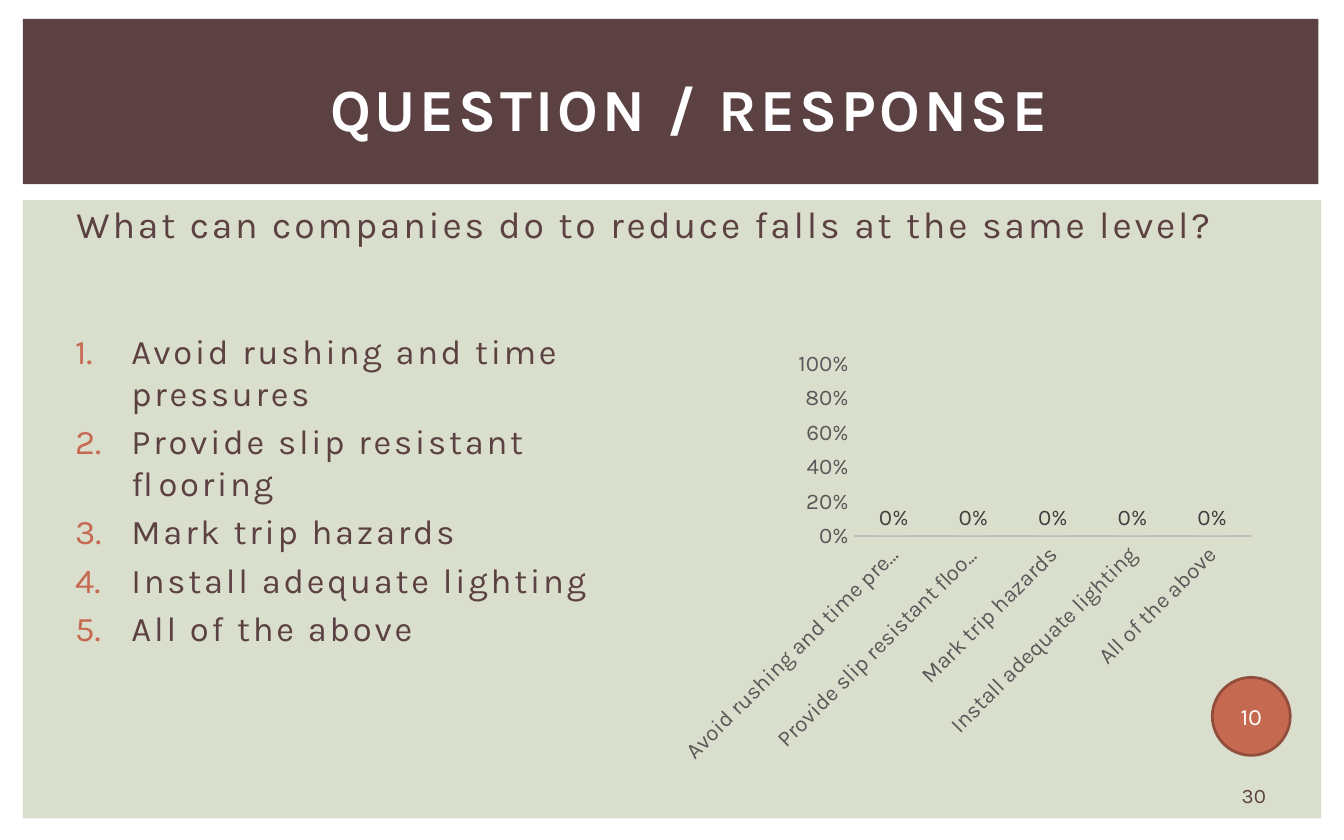
"""Build a quiz slide with numbered answers, a response chart and a countdown."""
from lxml import etree
from pptx import Presentation, util as u
from pptx.chart.data import CategoryChartData
from pptx.dml.color import RGBColor
from pptx.enum import chart as ch, dml, shapes, text
from pptx.oxml import parse_xml
from pptx.oxml.ns import qn

FONT = "Karla"
COLORS = {"brown": "5B4141", "sage": "DADECC", "rust": "C66951", "dark_rust": "924E3C",
          "pale": "F4E1DC", "white": "FFFFFF", "black": "000000", "axis_text": "595959",
          "axis_line": "BFBFBF", "label": "404040"}
ANSWERS = ["Avoid rushing and time pressures", "Provide slip resistant flooring",
           "Mark trip hazards", "Install adequate lighting", "All of the above"]
VOTES = [0] * len(ANSWERS)
PANELS = [((0.17, 1.49, 9.66, 4.6), "sage"), ((0.17, 0.14, 9.64, 1.23), "brown")]
CENTER, LEFT = text.PP_ALIGN.CENTER, text.PP_ALIGN.LEFT
MIDDLE, TOP = text.MSO_ANCHOR.MIDDLE, text.MSO_ANCHOR.TOP
TEXTS = [
    {"box": (0.42, 0.32, 9.17, 0.96), "lines": ["QUESTION / RESPONSE"], "size": 32,
     "color": "white", "bold": True, "spacing": 2, "align": CENTER, "anchor": MIDDLE, "inset": 0.35},
    {"box": (9.01, 5.79, 0.64, 0.25), "lines": ["30"], "size": 11, "color": "brown",
     "align": CENTER, "anchor": MIDDLE},
    {"box": (0.42, 1.45, 9.17, 0.75), "size": 20, "color": "brown", "spacing": 1.5,
     "lines": ["What can companies do to reduce falls at the same level?"],
     "before": 4, "indent": (0.05, 0)},
    {"box": (0.42, 2.41, 4.48, 2.3), "lines": ANSWERS, "size": 18.5, "color": "brown",
     "spacing": 1.5, "before": 3.7, "indent": (0.46, -0.42), "numbers": "rust"},
]
CHART_BOX = (5, 2.04, 4.5, 3.67)
PLOT = {"x": 0.301, "y": 0.181, "w": 0.658, "h": 0.35}
TIMER_BOX = (9.02, 5.04, 0.58, 0.58)


def rgb(name):
    return RGBColor.from_string(COLORS[name])


def inches(box):
    return [u.Inches(v) for v in box]


def style(font, size, color, bold=False):
    for key, value in {"name": FONT, "size": u.Pt(size), "bold": bold}.items():
        setattr(font, key, value)
    font.color.rgb = rgb(color)


def add_shape(s, kind, box, fill, line=None):
    sp = s.shapes.add_shape(kind, *inches(box))
    sp.shadow.inherit = False
    sp.fill.solid()
    sp.fill.fore_color.rgb = rgb(fill)
    if line:
        sp.line.color.rgb = rgb(line)
        sp.line.width = u.Pt(1.5)
    else:
        sp.line.fill.background()
    return sp


def number(pPr, color):
    clr = etree.SubElement(pPr, qn("a:buClr"))
    etree.SubElement(clr, qn("a:srgbClr"), val=COLORS[color])
    etree.SubElement(pPr, qn("a:buFont"), typeface=FONT)
    etree.SubElement(pPr, qn("a:buAutoNum"), type="arabicPeriod")


def write(tf, item):
    tf.vertical_anchor = item.get("anchor", TOP)
    for i, line in enumerate(item["lines"]):
        p = tf.add_paragraph() if i else tf.paragraphs[0]
        p.alignment = item.get("align", LEFT)
        p.space_before = u.Pt(item.get("before", 0))
        margin, indent = inches(item.get("indent", (0, 0)))
        pPr = p._p.get_or_add_pPr()
        pPr.set("marL", str(margin))
        pPr.set("indent", str(indent))
        if "numbers" in item:
            number(pPr, item["numbers"])
        r = p.add_run()
        r.text = line
        style(r.font, item["size"], item["color"], item.get("bold", False))
        r._r.get_or_add_rPr().set("spc", str(int(item.get("spacing", 0) * 100)))


def add_text(s, item):
    tf = s.shapes.add_textbox(*inches(item["box"])).text_frame
    tf.word_wrap = True
    tf.margin_left = u.Inches(item.get("inset", 0.1))
    write(tf, item)


def set_plot_area(chart):
    area = chart._chartSpace.chart.plotArea
    for old in area.findall(qn("c:layout")):
        area.remove(old)
    parts = {"layoutTarget": "inner", "xMode": "edge", "yMode": "edge", **PLOT}
    body = "".join(f'<c:{k} val="{v}"/>' for k, v in parts.items())
    ns = "http://schemas.openxmlformats.org/drawingml/2006/chart"
    area.insert(0, parse_xml(f'<c:layout xmlns:c="{ns}"><c:manualLayout>{body}'
                             '</c:manualLayout></c:layout>'))


def add_votes(s):
    data = CategoryChartData(number_format="0%")
    data.categories = ANSWERS
    data.add_series("Series 1", VOTES)
    chart = s.shapes.add_chart(ch.XL_CHART_TYPE.COLUMN_CLUSTERED, *inches(CHART_BOX), data).chart
    style(chart.font, 10, "black")
    chart.has_title = chart.has_legend = False
    set_plot_area(chart)
    for axis in (chart.category_axis, chart.value_axis):
        axis.major_tick_mark = axis.minor_tick_mark = ch.XL_TICK_MARK.NONE
        axis.has_major_gridlines = False
        style(axis.tick_labels.font, 12, "axis_text")
    cats, vals = chart.category_axis, chart.value_axis
    cats.format.line.color.rgb = rgb("axis_line")
    cats.format.line.width = u.Pt(1.5)
    cats._element.find(qn("c:txPr")).find(qn("a:bodyPr")).set("rot", str(-45 * 60000))
    vals.format.line.fill.background()
    for key, value in {"minimum_scale": 0, "maximum_scale": 1, "major_unit": 0.2}.items():
        setattr(vals, key, value)
    vals.tick_labels.number_format = "0%"
    vals.tick_labels.number_format_is_linked = False
    plot = chart.plots[0]
    for key, value in {"gap_width": 164, "overlap": -22, "vary_by_categories": False}.items():
        setattr(plot, key, value)
    series = plot.series[0]
    fill = series.format.fill
    fill.patterned()
    fill.pattern = dml.MSO_PATTERN.NARROW_HORIZONTAL
    fill.fore_color.rgb, fill.back_color.rgb = rgb("rust"), rgb("pale")
    labels = series.data_labels
    for key, value in {"show_value": True, "number_format": "0%", "number_format_is_linked": False,
                       "position": ch.XL_LABEL_POSITION.OUTSIDE_END}.items():
        setattr(labels, key, value)
    style(labels.font, 12, "label")


def add_timer(s):
    tf = add_shape(s, shapes.MSO_SHAPE.OVAL, TIMER_BOX, "rust", "dark_rust").text_frame
    tf.word_wrap = False
    for side in ("left", "top", "right", "bottom"):
        setattr(tf, f"margin_{side}", 0)
    write(tf, {"lines": ["10"], "size": 12.5, "color": "white", "align": CENTER, "anchor": MIDDLE})


def main():
    prs = Presentation()
    prs.slide_width, prs.slide_height = inches((10, 6.25))
    s = prs.slides.add_slide(prs.slide_layouts[6])
    for box, fill in PANELS:
        add_shape(s, shapes.MSO_SHAPE.RECTANGLE, box, fill)
    for item in TEXTS:
        add_text(s, item)
    add_votes(s)
    add_timer(s)
    prs.save("out.pptx")


if __name__ == "__main__":
    main()
